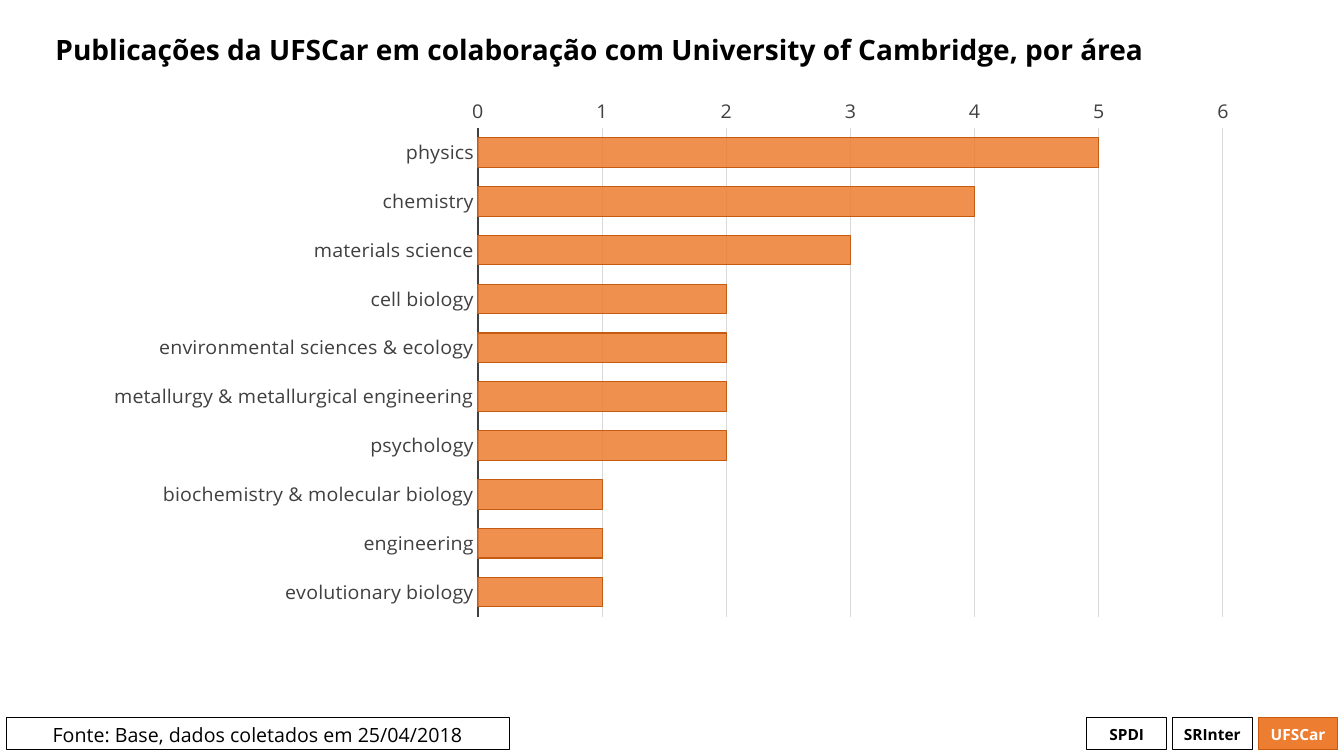
from lxml import etree
from pptx import Presentation
from pptx.chart.data import CategoryChartData
from pptx.dml.color import RGBColor
from pptx.enum.chart import XL_AXIS_CROSSES, XL_CHART_TYPE, XL_TICK_MARK
from pptx.enum.shapes import MSO_SHAPE
from pptx.enum.text import MSO_ANCHOR, PP_ALIGN
from pptx.oxml import parse_xml
from pptx.oxml.ns import nsdecls, qn
from pptx.util import Inches, Pt

BAR = XL_CHART_TYPE.BAR_CLUSTERED
NO_TICK = XL_TICK_MARK.NONE
AT_MAXIMUM = XL_AXIS_CROSSES.MAXIMUM
RECTANGLE = MSO_SHAPE.RECTANGLE
MIDDLE, TOP = MSO_ANCHOR.MIDDLE, MSO_ANCHOR.TOP
CENTER, LEFT = PP_ALIGN.CENTER, PP_ALIGN.LEFT

BLACK = RGBColor(0x00, 0x00, 0x00)
WHITE = RGBColor(0xFF, 0xFF, 0xFF)
ORANGE = RGBColor(0xED, 0x7D, 0x31)
DARK_ORANGE = RGBColor(0xC5, 0x5A, 0x11)
GRAY = RGBColor(0x40, 0x40, 0x40)
GRID_GRAY = RGBColor(0xD9, 0xD9, 0xD9)
FONT = "Open Sans"

# Content
TITLE = "Publicações da UFSCar em colaboração com University of Cambridge, por área"
SOURCE = "Fonte: Base, dados coletados em 25/04/2018"
PUBLICATIONS = [
    ("physics", 5),
    ("chemistry", 4),
    ("materials science", 3),
    ("cell biology", 2),
    ("environmental sciences & ecology", 2),
    ("metallurgy & metallurgical engineering", 2),
    ("psychology", 2),
    ("biochemistry & molecular biology", 1),
    ("engineering", 1),
    ("evolutionary biology", 1),
]
# Label, fill, line, text colour
TAGS = [
    ("SPDI", None, BLACK, BLACK),
    ("SRInter", None, BLACK, BLACK),
    ("UFSCar", ORANGE, DARK_ORANGE, WHITE),
]

# Layout, in inches
TITLE_BOX = (0.45, 0.06, 12.41, 0.91)
CHART_BOX = (0.91, 0.97, 11.52, 5.62)
PLOT_BOX = (4.74, 1.08, 7.39, 5.02)
FOOTER_TOP, FOOTER_HEIGHT = 7.12, 0.32
SOURCE_LEFT, SOURCE_WIDTH = 0.06, 4.99
TAG_LEFT, TAG_WIDTH, TAG_STEP = 10.78, 0.79, 0.85


def apply(target, **values):
    for name, value in values.items():
        setattr(target, name, value)


def style_font(font, size, color, bold=False):
    apply(font, name=FONT, size=Pt(size), bold=bold)
    font.color.rgb = color


def style_line(line, color, width):
    line.color.rgb = color
    line.width = Pt(width)


def footer_box(slide, left, width, text, size, fill, line, color, bold, anchor):
    box = slide.shapes.add_shape(RECTANGLE, Inches(left), Inches(FOOTER_TOP),
                                 Inches(width), Inches(FOOTER_HEIGHT))
    box.shadow.inherit = False
    if fill is None:
        box.fill.background()
    else:
        box.fill.solid()
        box.fill.fore_color.rgb = fill
    style_line(box.line, line, 0.75)
    frame = box.text_frame
    apply(frame, text=text, vertical_anchor=anchor, word_wrap=True,
          margin_left=0, margin_right=0)
    frame.paragraphs[0].alignment = CENTER
    style_font(frame.paragraphs[0].runs[0].font, size, color, bold)


def add_title(slide):
    title = slide.shapes.title
    apply(title, **dict(zip(("left", "top", "width", "height"), map(Inches, TITLE_BOX))))
    apply(title.text_frame, text=TITLE, vertical_anchor=MIDDLE, word_wrap=True)
    heading = title.text_frame.paragraphs[0]
    apply(heading, alignment=LEFT, line_spacing=0.9)
    style_font(heading.runs[0].font, 20, BLACK, True)


def place_plot(chart):
    left, top, width, height = CHART_BOX
    x, y, w, h = PLOT_BOX
    shares = {"x": (x - left) / width, "y": (y - top) / height,
              "w": w / width, "h": h / height}
    parts = '<c:layoutTarget val="inner"/><c:xMode val="edge"/><c:yMode val="edge"/>'
    parts += "".join(f'<c:{key} val="{share:.4f}"/>' for key, share in shares.items())
    layout = parse_xml(f'<c:layout {nsdecls("c")}><c:manualLayout>{parts}'
                       '</c:manualLayout></c:layout>')
    plot_area = chart.plots[0]._element.getparent()
    for old in plot_area.findall(qn("c:layout")):
        plot_area.remove(old)
    plot_area.insert(0, layout)


def add_publications_chart(slide):
    areas, counts = zip(*PUBLICATIONS)
    data = CategoryChartData()
    data.categories = areas
    data.add_series("Series 1", counts)
    chart = slide.shapes.add_chart(BAR, *map(Inches, CHART_BOX), data).chart
    apply(chart, has_legend=False, has_title=False)
    style_font(chart.font, 14, BLACK)

    # Bars
    plot = chart.plots[0]
    apply(plot, gap_width=65, vary_by_categories=False)
    bars = plot.series[0].format
    bars.fill.solid()
    bars.fill.fore_color.rgb = ORANGE
    color = plot.series[0]._element.find(".//" + qn("a:srgbClr"))
    etree.SubElement(color, qn("a:alpha"), val="85000")
    style_line(bars.line, DARK_ORANGE, 0.75)

    # Axes
    area_axis, count_axis = chart.category_axis, chart.value_axis
    for axis in (area_axis, count_axis):
        apply(axis, major_tick_mark=NO_TICK, minor_tick_mark=NO_TICK)
        style_font(axis.tick_labels.font, 14, GRAY)
    apply(area_axis, reverse_order=True, crosses=AT_MAXIMUM, has_major_gridlines=False)
    style_line(area_axis.format.line, GRAY, 1.5)
    apply(count_axis, minimum_scale=0, maximum_scale=6, major_unit=1,
          has_major_gridlines=True)
    count_axis.format.line.fill.background()
    style_line(count_axis.major_gridlines.format.line, GRID_GRAY, 0.75)
    place_plot(chart)


def main():
    deck = Presentation()
    apply(deck, slide_width=Inches(13.33), slide_height=Inches(7.5))
    slide = deck.slides.add_slide(deck.slide_layouts[5])

    # Footer
    for i, (label, fill, line, color) in enumerate(TAGS):
        footer_box(slide, TAG_LEFT + i * TAG_STEP, TAG_WIDTH, label, 11,
                   fill, line, color, True, MIDDLE)
    footer_box(slide, SOURCE_LEFT, SOURCE_WIDTH, SOURCE, 14,
               None, BLACK, BLACK, False, TOP)

    add_title(slide)
    add_publications_chart(slide)
    deck.save("out.pptx")


if __name__ == "__main__":
    main()
